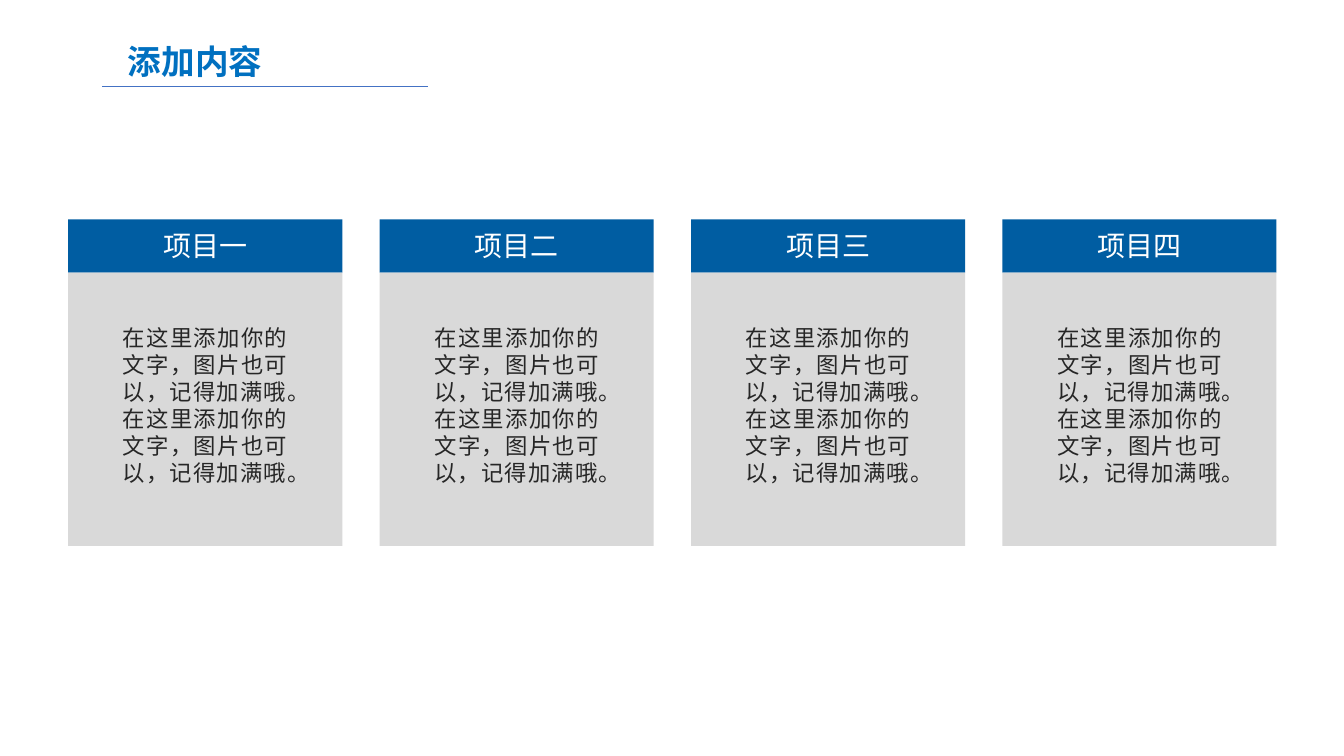
from lxml.etree import SubElement
from pptx import Presentation
from pptx.dml.color import RGBColor
from pptx.enum.shapes import MSO_CONNECTOR as Conn, MSO_SHAPE as Shape
from pptx.enum.text import MSO_ANCHOR as Anchor, PP_ALIGN as Align
from pptx.oxml.ns import qn
from pptx.util import Cm, Pt

TITLE = "添加内容"
ITEMS = ["项目一", "项目二", "项目三", "项目四"]
BODY = "在这里添加你的文字，图片也可以，记得加满哦。" * 2

FONT = "Noto Sans CJK SC"
BLUE, GRAY = "005DA2", "D9D9D9"
WIDE, STEP = 6.91, 7.85
LEFT, TOP = 1.72, 5.53
HEAD, CARD = 1.34, 6.89
TEXT = 4.65


def color(code):
    return RGBColor.from_string(code)


def add_rect(x, y, w, h, fill):
    rect = slide.shapes.add_shape(Shape.RECTANGLE, Cm(x), Cm(y), Cm(w), Cm(h))
    rect.shadow.inherit = False
    rect.fill.solid()
    rect.fill.fore_color.rgb = color(fill)
    rect.line.fill.background()


def add_text(text, x, y, w, h, size, tint, align=Align.CENTER, bold=False, wrap=True):
    box = slide.shapes.add_textbox(Cm(x), Cm(y), Cm(w), Cm(h))
    frame = box.text_frame
    frame.word_wrap = wrap
    frame.vertical_anchor = Anchor.TOP
    para = frame.paragraphs[0]
    para.text = text
    para.alignment = align
    para.line_spacing = Pt(round(size * 1.21, 1))
    font = para.font
    font.name, font.size, font.bold = FONT, Pt(size), bold
    font.color.rgb = color(tint)
    # East Asian glyphs take their typeface from a:ea
    props = para._p.pPr.find(qn("a:defRPr"))
    SubElement(props, qn("a:ea"), typeface=FONT)


deck = Presentation()
deck.slide_width, deck.slide_height = Cm(33.88), Cm(19.05)
slide = deck.slides.add_slide(deck.slide_layouts[6])

rule = slide.shapes.add_connector(Conn.STRAIGHT, Cm(2.58), Cm(2.18), Cm(10.78), Cm(2.18))
rule.line.color.rgb = color("4472C4")
rule.line.width = Pt(0.5)
SubElement(rule._element.spPr, qn("a:effectLst"))
add_text(TITLE, 2.95, 0.91, 3.94, 1.27, 24, "0070C0", bold=True, wrap=False)

for i, item in enumerate(ITEMS):
    x = LEFT + i * STEP
    inset = x + (WIDE - TEXT) / 2
    add_rect(x, TOP, WIDE, HEAD, BLUE)
    add_rect(x, TOP + HEAD, WIDE, CARD, GRAY)
    add_text(item, inset, 5.62, TEXT, 1.12, 20, "FFFFFF")
    add_text(BODY, inset, 8.03, TEXT, 4.37, 16, "262626", Align.JUSTIFY)

deck.save("out.pptx")
